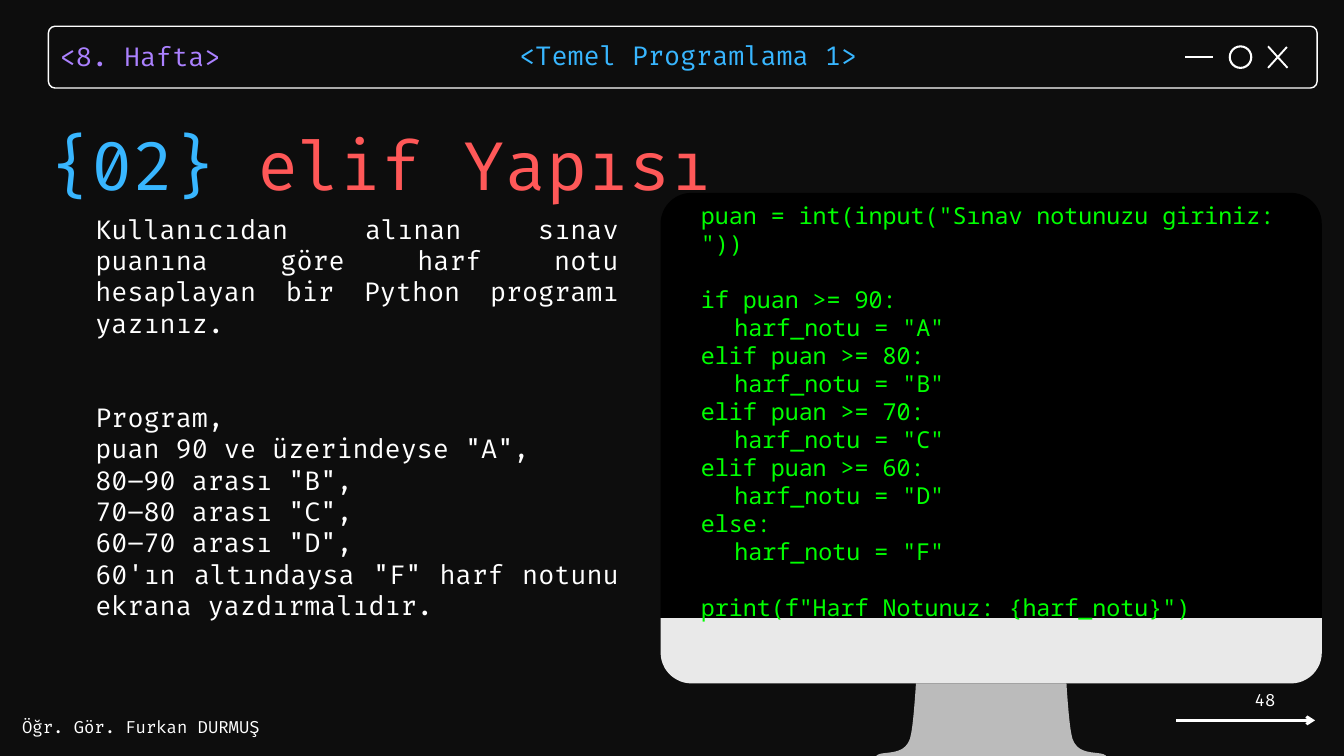
"""Build the slide on the elif structure with its code monitor."""
from lxml.etree import SubElement
from pptx import Presentation
from pptx.dml.color import RGBColor
from pptx.enum.shapes import MSO_CONNECTOR, MSO_SHAPE
from pptx.enum.text import MSO_ANCHOR, MSO_AUTO_SIZE, PP_ALIGN
from pptx.oxml.ns import qn
from pptx.util import Inches, Pt

COLORS = {
    "background": "0D0D0D", "white": "FFFFFF", "purple": "AB81FF", "blue": "38B6FF",
    "red": "FF5858", "green": "00FF00", "black": "000000", "chin": "E9E9E9", "stand": "BBBBBB",
}
SANS, MONO = "Fira Code", "Noto Sans Mono"

TITLE = [("{02} ", "blue"), ("elif Yapısı", "red")]
TASK = [
    "Kullanıcıdan alınan sınav puanına göre harf notu hesaplayan bir Python programı yazınız.",
    "Program,",
    'puan 90 ve üzerindeyse "A",',
    '80–90 arası "B",',
    '70–80 arası "C",',
    '60–70 arası "D",',
    "60'ın altındaysa \"F\" harf notunu ekrana yazdırmalıdır.",
]
CODE = [
    'puan = int(input("Sınav notunuzu giriniz: "))',
    "if puan >= 90:", '\tharf_notu = "A"',
    "elif puan >= 80:", '\tharf_notu = "B"',
    "elif puan >= 70:", '\tharf_notu = "C"',
    "elif puan >= 60:", '\tharf_notu = "D"',
    "else:", '\tharf_notu = "F"',
    'print(f"Harf Notunuz: {harf_notu}")',
]
TEXTS = [
    {"box": (0.89, 0.52, 3.4, 0.53), "lines": ["<8. Hafta>"], "size": 28,
     "color": "purple", "format": {"line_spacing": Pt(39.2)}},
    {"box": (7.73, 0.51, 5.29, 0.53), "lines": ["<Temel Programlama 1>"], "size": 28,
     "color": "blue", "format": {"line_spacing": Pt(39.2)}},
    {"box": (0.33, 10.67, 3.67, 0.3), "lines": ["Öğr. Gör. Furkan DURMUŞ"], "size": 18},
    {"box": (1.42, 3.17, 7.78, 5.65), "lines": TASK, "size": 28,
     "format": {"alignment": PP_ALIGN.JUSTIFY}, "gaps": {1: 67.2}},
    {"box": (16.75, 10.21, 2.23, 0.4), "lines": ["48"], "size": 18,
     "format": {"alignment": PP_ALIGN.RIGHT}, "anchor": MSO_ANCHOR.MIDDLE},
    {"box": (10.43, 2.99, 8.6, 5.89), "lines": CODE, "size": 25, "font": MONO,
     "color": "green", "gaps": {1: 30, 11: 30}},
]
SHAPES = [
    {"kind": MSO_SHAPE.ROUNDED_RECTANGLE, "box": (0.72, 0.39, 18.88, 0.92), "radius": 0.1,
     "line": ("white", 1.5)},
    {"kind": MSO_SHAPE.OVAL, "box": (18.3, 0.69, 0.32, 0.32), "line": ("white", 2.25)},
    {"kind": MSO_SHAPE.ROUND_2_SAME_RECTANGLE, "box": (9.83, 2.87, 9.84, 6.33),
     "radius": 0.46, "fill": "black"},
    {"kind": MSO_SHAPE.ROUND_2_SAME_RECTANGLE, "box": (9.83, 9.2, 9.84, 0.97),
     "radius": 0.46, "fill": "chin", "rotation": 180},
    {"kind": MSO_SHAPE.RECTANGLE, "box": (10.25, 3.24, 9.04, 5.63), "fill": "black",
     "line": ("black", 2)},
]
LINES = [
    ((17.64, 0.85), (18.05, 0.85), 2, False),
    ((18.87, 0.69), (19.16, 1.01), 2, False),
    ((19.15, 0.7), (18.87, 1.01), 2, False),
    ((17.5, 10.72), (19.57, 10.72), 3, True),
]
STAND_CENTER = 14.75
STAND_CURVES = [
    [(13.63, 10.17), (13.63, 10.17), (13.6, 10.69), (13.56, 10.91)],
    [(13.56, 10.91), (13.51, 11.28), (13.15, 11.16), (13.05, 11.24)],
    [(13.05, 11.24), (13.03, 11.25), (13.04, 11.27), (13.06, 11.27)],
]


def color(name):
    return RGBColor.from_string(COLORS[name])


def apply(target, values):
    for name, value in values.items():
        setattr(target, name, value)


def style_font(font, size, name, color_name):
    apply(font, {"size": Pt(size), "name": name, "bold": False})
    font.color.rgb = color(color_name)


def style_frame(frame, anchor=MSO_ANCHOR.TOP):
    apply(frame, {"margin_left": 0, "margin_right": 0, "margin_top": 0, "margin_bottom": 0,
                  "word_wrap": True, "auto_size": MSO_AUTO_SIZE.NONE, "vertical_anchor": anchor})


def paint(shape, fill=None, line=None):
    shape.shadow.inherit = False
    if fill:
        shape.fill.solid()
        shape.fill.fore_color.rgb = color(fill)
    else:
        shape.fill.background()
    if line:
        shape.line.color.rgb = color(line[0])
        shape.line.width = Pt(line[1])
    else:
        shape.line.fill.background()


def add_shape(slide, item):
    shape = slide.shapes.add_shape(item["kind"], *map(Inches, item["box"]))
    paint(shape, item.get("fill"), item.get("line"))
    shape.rotation = item.get("rotation", 0)
    if "radius" in item:
        shape.adjustments[0] = item["radius"] / min(item["box"][2:])


def add_line(slide, start, end, width, arrow):
    connector = slide.shapes.add_connector(MSO_CONNECTOR.STRAIGHT, *map(Inches, start + end))
    connector.line.color.rgb = color("white")
    connector.line.width = Pt(width)
    if arrow:
        SubElement(connector.line._get_or_add_ln(), qn("a:tailEnd"), type="arrow")
    SubElement(connector._element.spPr, qn("a:effectLst"))


def add_text(slide, item):
    frame = slide.shapes.add_textbox(*map(Inches, item["box"])).text_frame
    style_frame(frame, item.get("anchor", MSO_ANCHOR.TOP))
    for index, text in enumerate(item["lines"]):
        paragraph = frame.paragraphs[0] if index == 0 else frame.add_paragraph()
        apply(paragraph, item.get("format", {}))
        if index in item.get("gaps", {}):
            paragraph.space_before = Pt(item["gaps"][index])
        run = paragraph.add_run()
        run.text = text
        style_font(run.font, item["size"], item.get("font", SANS), item.get("color", "white"))


def add_title(slide):
    title = slide.shapes.title
    apply(title, {"left": Inches(0.75), "top": Inches(1.61),
                  "width": Inches(19.25), "height": Inches(1.41)})
    style_frame(title.text_frame)
    paragraph = title.text_frame.paragraphs[0]
    apply(paragraph, {"alignment": PP_ALIGN.LEFT, "line_spacing": Pt(102.6)})
    for text, color_name in TITLE:
        run = paragraph.add_run()
        run.text = text
        style_font(run.font, 72, SANS, color_name)


def curve_points(curve, steps=12):
    for step in range(steps + 1):
        t = step / steps
        weights = ((1 - t) ** 3, 3 * t * (1 - t) ** 2, 3 * t * t * (1 - t), t ** 3)
        yield tuple(sum(w * point[axis] for w, point in zip(weights, curve)) for axis in (0, 1))


def add_stand(slide):
    left = [point for curve in STAND_CURVES for point in curve_points(curve)]
    right = [(2 * STAND_CENTER - x, y) for x, y in reversed(left)]
    points = [(Inches(x), Inches(y)) for x, y in left + right]
    builder = slide.shapes.build_freeform(*points[0])
    builder.add_line_segments(points[1:], close=True)
    paint(builder.convert_to_shape(), "stand")


def main():
    presentation = Presentation()
    apply(presentation, {"slide_width": Inches(20), "slide_height": Inches(11.25)})
    slide = presentation.slides.add_slide(presentation.slide_layouts[5])
    slide.background.fill.solid()
    slide.background.fill.fore_color.rgb = color("background")
    add_title(slide)
    add_stand(slide)
    for item in SHAPES:
        add_shape(slide, item)
    for line in LINES:
        add_line(slide, *line)
    for item in TEXTS:
        add_text(slide, item)
    presentation.save("out.pptx")


if __name__ == "__main__":
    main()
